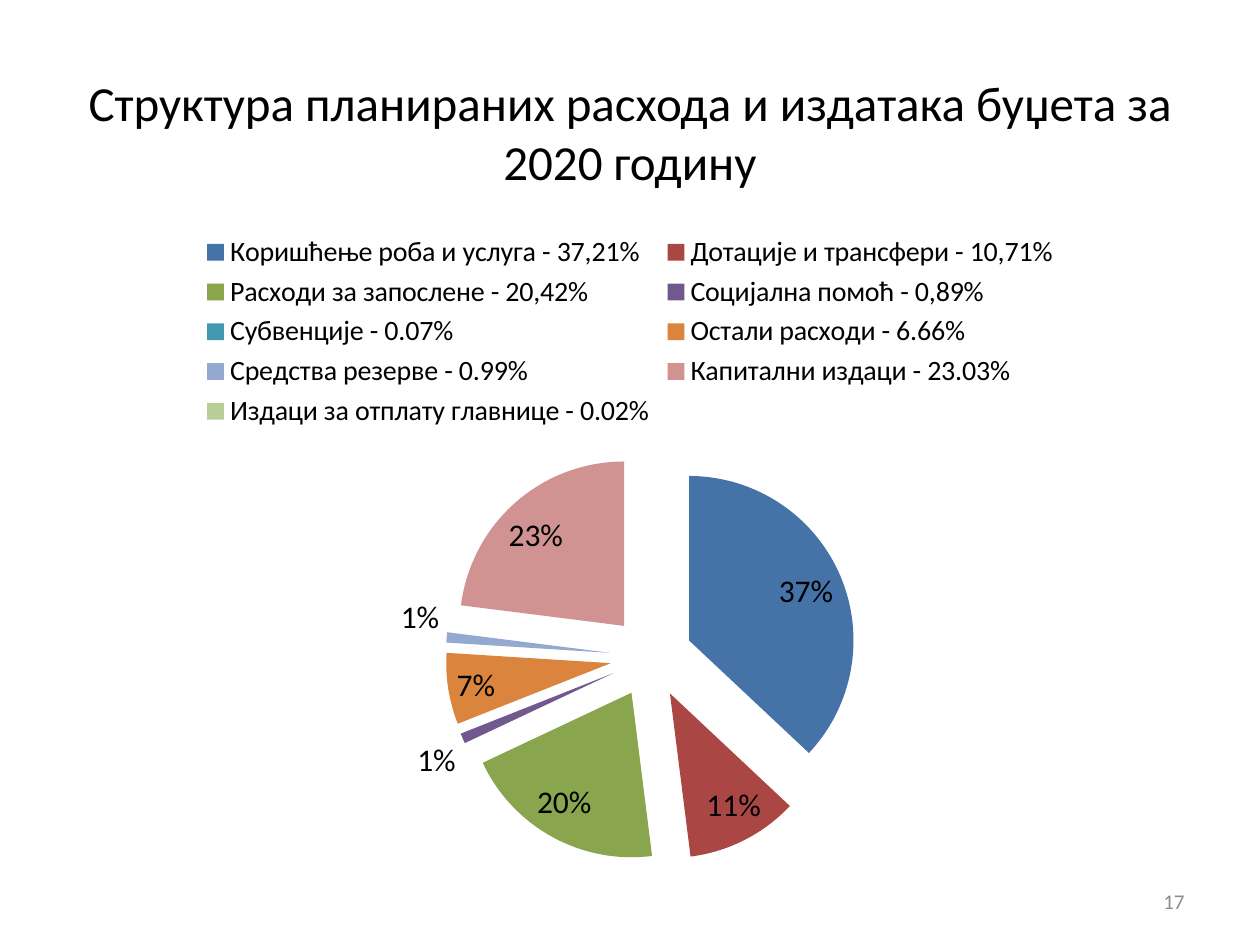
from dataclasses import dataclass

from pptx import Presentation
from pptx.chart.data import CategoryChartData
from pptx.dml.color import RGBColor
from pptx.enum.chart import XL_CHART_TYPE, XL_LABEL_POSITION, XL_LEGEND_POSITION
from pptx.enum.text import MSO_ANCHOR, PP_ALIGN
from pptx.util import Inches, Pt


@dataclass(frozen=True)
class Theme:
    font: str = "Calibri"
    text: str = "000000"
    muted: str = "8C8C8C"
    title_size: int = 28
    label_size: int = 18
    legend_size: int = 16
    number_size: int = 12
    slices: tuple = ("4572A7", "AA4643", "89A54E", "71588F", "4198AF",
                     "DB843D", "93A9CF", "D19392", "B9CD96")


EXPENSES = [
    ("Коришћење роба и услуга - 37,21%", 37),
    ("Дотације и трансфери - 10,71%", 11),
    ("Расходи за запослене - 20,42%", 20),
    ("Социјална помоћ - 0,89%", 1),
    ("Субвенције - 0.07%", 0),
    ("Остали расходи - 6.66%", 7),
    ("Средства резерве - 0.99%", 1),
    ("Капитални издаци - 23.03%", 23),
    ("Издаци за отплату главнице - 0.02%", 0),
]


class SlideBuilder:
    def __init__(self, slide, theme):
        self.slide = slide
        self.theme = theme

    def style_font(self, font, size, color):
        font.name = self.theme.font
        font.size = Pt(size)
        font.color.rgb = RGBColor.from_string(color)

    def text(self, box, content, size, color, alignment):
        shape = self.slide.shapes.add_textbox(*map(Inches, box))
        frame = shape.text_frame
        frame.word_wrap = True
        frame.vertical_anchor = MSO_ANCHOR.MIDDLE
        frame.text = content
        paragraph = frame.paragraphs[0]
        paragraph.alignment = alignment
        self.style_font(paragraph.runs[0].font, size, color)

    def exploded_pie(self, box, name, rows):
        theme = self.theme
        data = CategoryChartData()
        data.categories = [label for label, _ in rows]
        data.add_series(name, [value for _, value in rows])
        chart = self.slide.shapes.add_chart(
            XL_CHART_TYPE.PIE_EXPLODED, *map(Inches, box), data).chart
        chart.has_title = False
        self.style_font(chart.font, theme.label_size, theme.text)

        # Legend above the pie
        chart.has_legend = True
        chart.legend.position = XL_LEGEND_POSITION.TOP
        chart.legend.include_in_layout = False
        self.style_font(chart.legend.font, theme.legend_size, theme.text)

        # Slice colours
        plot = chart.plots[0]
        plot.vary_by_categories = True
        series = plot.series[0]
        for index, color in enumerate(theme.slices):
            fill = series.points[index].format.fill
            fill.solid()
            fill.fore_color.rgb = RGBColor.from_string(color)

        # Percentages without leader lines
        labels = series.data_labels
        labels.show_value = False
        labels.show_percentage = True
        labels.number_format = "0%"
        labels.number_format_is_linked = False
        labels.position = XL_LABEL_POSITION.BEST_FIT
        self.style_font(labels.font, theme.label_size, theme.text)
        for leader_lines in chart.element.xpath(".//c:showLeaderLines"):
            leader_lines.set("val", "0")


def main():
    presentation = Presentation()
    presentation.slide_width = Inches(10)
    presentation.slide_height = Inches(7.5)
    theme = Theme()
    slide = presentation.slides.add_slide(presentation.slide_layouts[6])
    builder = SlideBuilder(slide, theme)

    # Title
    builder.text((0.5, 0.58, 9, 0.92),
                 "Структура планираних расхода и издатака буџета за 2020 годину",
                 theme.title_size, theme.text, PP_ALIGN.CENTER)

    # Budget structure
    builder.exploded_pie((0.5, 1.75, 9, 5.5), "Series 1", EXPENSES)

    # Slide number
    builder.text((7.17, 6.95, 2.33, 0.4), "17",
                 theme.number_size, theme.muted, PP_ALIGN.RIGHT)

    presentation.save("out.pptx")


if __name__ == "__main__":
    main()
